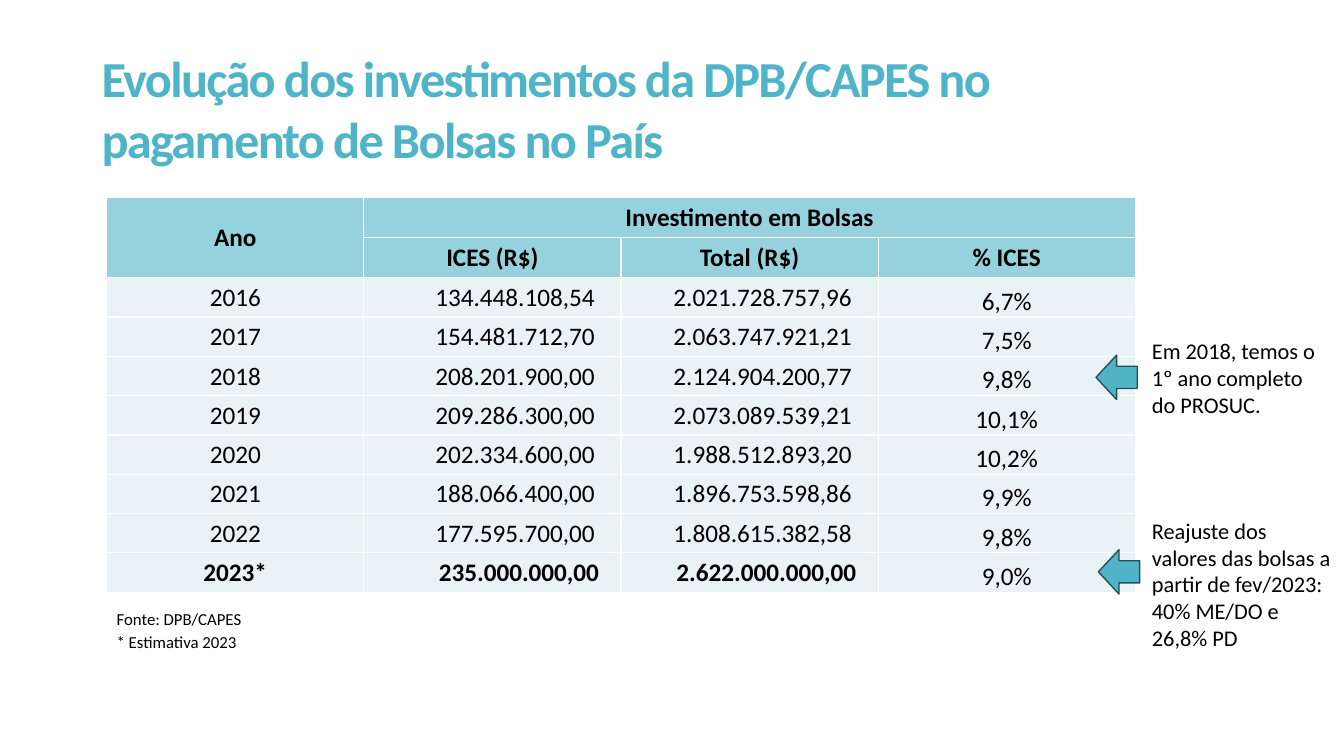
from pptx import Presentation
from pptx.dml.color import RGBColor
from pptx.enum.shapes import MSO_SHAPE
from pptx.enum.text import MSO_ANCHOR, MSO_AUTO_SIZE, PP_ALIGN
from pptx.oxml import parse_xml
from pptx.oxml.ns import nsdecls
from pptx.util import Cm, Pt

HEADERS = ["ICES (R$)", "Total (R$)", "% ICES"]
INVESTMENTS = [
    ("2016", "134.448.108,54", "2.021.728.757,96", "6,7%"),
    ("2017", "154.481.712,70", "2.063.747.921,21", "7,5%"),
    ("2018", "208.201.900,00", "2.124.904.200,77", "9,8%"),
    ("2019", "209.286.300,00", "2.073.089.539,21", "10,1%"),
    ("2020", "202.334.600,00", "1.988.512.893,20", "10,2%"),
    ("2021", "188.066.400,00", "1.896.753.598,86", "9,9%"),
    ("2022", "177.595.700,00", "1.808.615.382,58", "9,8%"),
    ("2023*", "235.000.000,00", "2.622.000.000,00", "9,0%"),
]


def rgb(value):
    return RGBColor.from_string(value)


class SlideBuilder:
    font = "Calibri"
    black = "000000"
    accent = "50B4C8"
    outline = "234F58"
    header_fill = "96D2DE"
    body_fill = "E9F2F5"
    border = "FFFFFF"

    def __init__(self, slide):
        self.s = slide

    def add_run(self, p, text, size, color=black, bold=False, spacing=None):
        r = p.add_run()
        r.text = text
        r.font.name = self.font
        r.font.size = Pt(size)
        r.font.bold = bold
        r.font.color.rgb = rgb(color)
        if spacing is not None:
            r._r.get_or_add_rPr().set("spc", str(round(spacing * 100)))

    def text(self, text, left, top, width, height, size, **style):
        sp = self.s.shapes.add_textbox(Cm(left), Cm(top), Cm(width), Cm(height))
        tf = sp.text_frame
        tf.word_wrap = True
        tf.auto_size = MSO_AUTO_SIZE.SHAPE_TO_FIT_TEXT
        self.add_run(tf.paragraphs[0], text, size, **style)

    def arrow(self, left, top):
        sp = self.s.shapes.add_shape(
            MSO_SHAPE.DOWN_ARROW, Cm(left), Cm(top), Cm(1.12), Cm(1.04))
        sp.rotation = 90
        sp.shadow.inherit = False
        sp.fill.solid()
        sp.fill.fore_color.rgb = rgb(self.accent)
        sp.line.color.rgb = rgb(self.outline)
        sp.line.width = Pt(1)

    def table(self, left, top, col_width, row_heights, cols):
        shape = self.s.shapes.add_table(
            len(row_heights), cols, Cm(left), Cm(top),
            Cm(col_width * cols), Cm(sum(row_heights)))
        table = shape.table
        table.first_row = table.horz_banding = False
        for column in table.columns:
            column.width = Cm(col_width)
        for row, height in zip(table.rows, row_heights):
            row.height = Cm(height)
        for cell in table.iter_cells():
            self.paint_cell(cell, self.body_fill)
        return table

    def paint_cell(self, cell, fill):
        cell.fill.solid()
        cell.fill.fore_color.rgb = rgb(fill)
        tcPr = cell._tc.get_or_add_tcPr()
        for i, side in enumerate("LRTB"):
            tcPr.insert(i, parse_xml(
                f'<a:ln{side} {nsdecls("a")} w="12700"><a:solidFill>'
                f'<a:srgbClr val="{self.border}"/></a:solidFill></a:ln{side}>'))

    def cell(self, cell, text, bold=False, align=PP_ALIGN.CENTER,
             anchor=MSO_ANCHOR.MIDDLE, right=0.02):
        cell.margin_left = cell.margin_top = Cm(0.02)
        cell.margin_right = Cm(right)
        cell.margin_bottom = 0
        cell.vertical_anchor = anchor
        p = cell.text_frame.paragraphs[0]
        p.alignment = align
        self.add_run(p, text, 18, bold=bold)

    def header(self, cell, text):
        cell.fill.fore_color.rgb = rgb(self.header_fill)
        self.cell(cell, text, bold=True)


def add_investment_table(b):
    table = b.table(2.69, 4.98, 6.48, [1.01] * 2 + [0.99] * len(INVESTMENTS), 4)
    table.cell(0, 0).merge(table.cell(1, 0))
    table.cell(0, 1).merge(table.cell(0, 3))
    b.header(table.cell(0, 0), "Ano")
    b.header(table.cell(0, 1), "Investimento em Bolsas")
    for col, text in enumerate(HEADERS, 1):
        b.header(table.cell(1, col), text)
    for row, (year, ices, total, share) in enumerate(INVESTMENTS, 2):
        estimate = year.endswith("*")
        b.cell(table.cell(row, 0), year, bold=estimate)
        for col, amount in enumerate((ices, total), 1):
            b.cell(table.cell(row, col), amount, bold=estimate,
                   align=PP_ALIGN.RIGHT, right=0.55 if estimate else 0.66)
        b.cell(table.cell(row, 3), share, anchor=MSO_ANCHOR.BOTTOM)


def main():
    prs = Presentation()
    prs.slide_width, prs.slide_height = Cm(33.87), Cm(19.05)
    b = SlideBuilder(prs.slides.add_slide(prs.slide_layouts[6]))

    b.text("Evolução dos investimentos da DPB/CAPES no pagamento de Bolsas no País",
           2.31, 1.07, 26.11, 3.33, 36, color=b.accent, bold=True, spacing=-1.2)
    add_investment_table(b)
    b.text("Em 2018, temos o 1º ano completo do PROSUC.",
           28.78, 8.38, 4.78, 2.31, 16)
    b.text("Reajuste dos valores das bolsas a partir de fev/2023: "
           "40% ME/DO e 26,8% PD", 28.78, 12.9, 5.08, 3.68, 16)
    b.arrow(27.58, 8.99)
    b.arrow(27.64, 13.89)
    b.text("Fonte: DPB/CAPES", 2.69, 15.21, 14.2, 0.76, 12)
    b.text("* Estimativa 2023", 2.69, 15.8, 16.94, 0.76, 12)
    prs.save("out.pptx")


if __name__ == "__main__":
    main()
